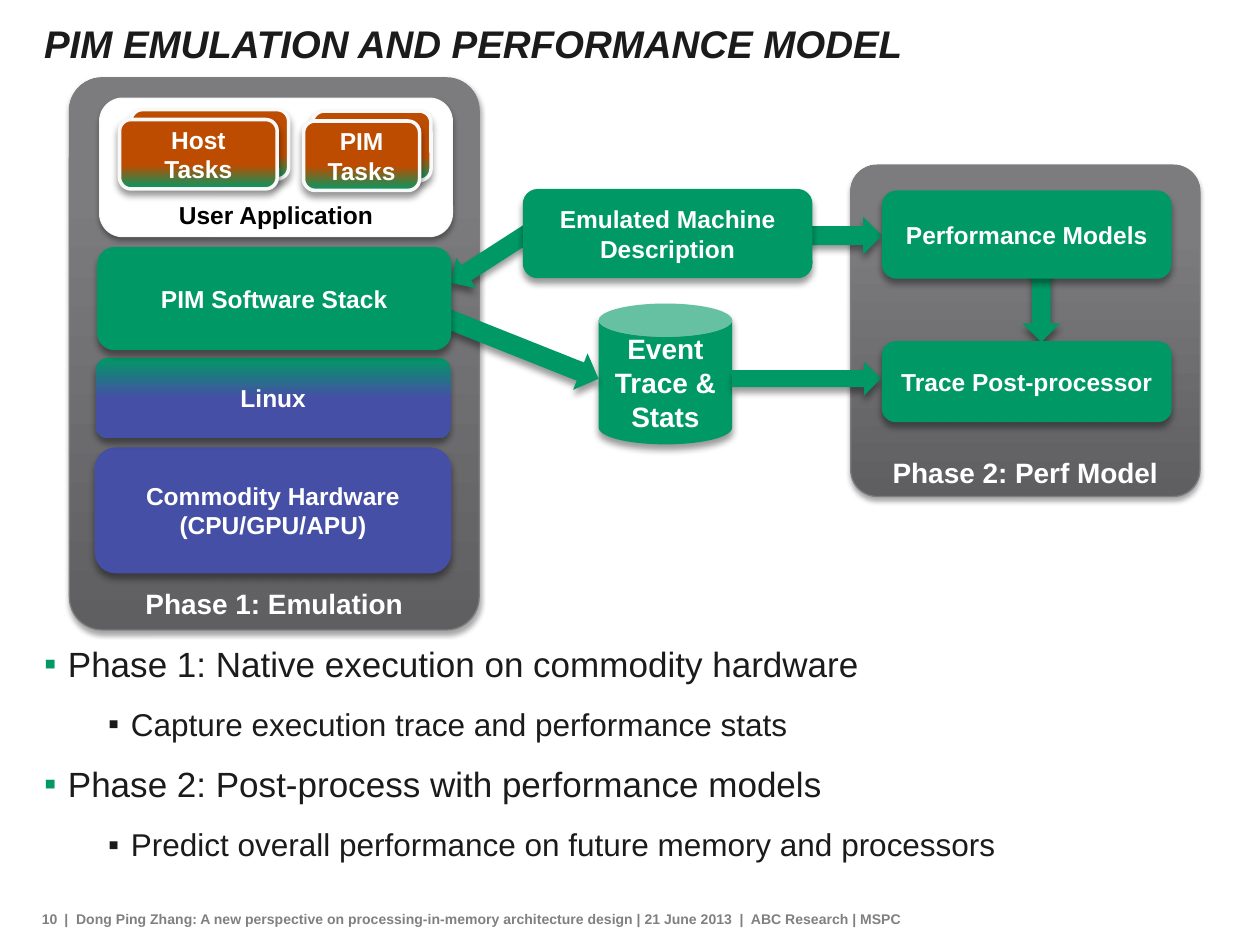
from lxml.etree import SubElement
from pptx import Presentation
from pptx.dml.color import RGBColor
from pptx.enum.shapes import MSO_SHAPE as SHAPE
from pptx.enum.text import MSO_ANCHOR as ANCHOR, PP_ALIGN as ALIGN
from pptx.oxml.ns import qn
from pptx.util import Cm, Pt

FONT = "Arial"
GREEN, BLUE, ORANGE = "009966", "464FA6", "BD4C00"
WHITE, OFF_WHITE, BLACK = "FFFFFF", "F9F9F9", "000000"
INK, FOOTER_GREY, PANEL_LINE = "1B1B1B", "807F82", "7D7C7F"

# Gradients: start colour, end colour, end position, counterclockwise angle
PANEL_FILL = ("5F5E61", "7C7B7E", 0.8, 90)
LINUX_FILL = (GREEN, BLUE, 0.5, 270)
TASK_FILL = (GREEN, ORANGE, 0.35, 90)

# Shadows: opacity %, blur pt, distance pt
BOX_SHADOW, PANEL_SHADOW = (40, 4, 3), (35, 3.1, 1.8)

TITLE = "PIM EMULATION AND PERFORMANCE MODEL"
FOOTER = ("|  Dong Ping Zhang: A new perspective on processing-in-memory architecture "
          "design | 21 June 2013  |  ABC Research | MSPC")
BULLETS = [
    (0, "Phase 1: Native execution on commodity hardware"),
    (1, "Capture execution trace and performance stats"),
    (0, "Phase 2: Post-process with performance models"),
    (1, "Predict overall performance on future memory and processors"),
]
# Per level: text size, left margin cm, hanging indent cm, bullet colour
LEVELS = [(20, 0.48, 0.48, GREEN), (18, 1.75, 0.46, INK)]

# Boxes: text, (left, top, width, height) in cm, fill
PANELS = [
    ("Phase 2: Perf Model", (17.15, 3.33, 7.04, 6.68)),
    ("Phase 1: Emulation", (1.4, 1.57, 8.26, 11.13)),
]
USER_APP = ("User Application", (2.01, 1.98, 7.11, 2.79))
EVENT_STORE = ("Event Trace & Stats", (12.07, 6.12, 2.69, 2.84))
# Arrows: (left, top, width, height) in cm, rotation
ARROWS = [
    ((8.94, 4.83, 1.85, 0.74), 147.2),
    ((8.71, 6.6, 3.48, 0.79), 21.7),
    ((16.28, 4.37, 1.5, 0.76), 0),
    ((14.76, 7.29, 3, 0.69), 0),
    ((20.24, 5.77, 1.5, 0.76), 90),
]
BOXES = [
    ("Commodity Hardware (CPU/GPU/APU)", (1.91, 9.02, 7.19, 2.54), BLUE),
    ("Linux", (1.93, 7.21, 7.16, 1.63), LINUX_FILL),
    ("PIM Software Stack", (1.96, 4.98, 7.14, 2.08), GREEN),
    ("Emulated Machine Description", (10.54, 3.81, 5.84, 1.8), GREEN),
    ("Performance Models", (17.78, 3.84, 5.84, 1.78), GREEN),
    ("Trace Post-processor", (17.78, 6.88, 5.84, 1.63), GREEN),
]
# Task stacks: text, back card, front card
TASKS = [
    ("Host Tasks", (2.64, 2.21, 3.18, 1.4), (2.41, 2.41, 3.18, 1.4)),
    ("PIM Tasks", (6.3, 2.24, 2.39, 1.4), (6.12, 2.44, 2.34, 1.4)),
]


def rgb(color):
    return RGBColor.from_string(color)


def add_run(p, text, size, color, bold=False, italic=False):
    r = p.add_run()
    r.text = text
    r.font.name, r.font.size = FONT, Pt(size)
    r.font.bold, r.font.italic = bold, italic
    r.font.color.rgb = rgb(color)


def set_margins(tf, left, top, right, bottom):
    tf.margin_left, tf.margin_top = Cm(left), Cm(top)
    tf.margin_right, tf.margin_bottom = Cm(right), Cm(bottom)


def set_fill(sp, fill):
    """Fill with one colour, or with a gradient tuple."""
    if isinstance(fill, str):
        sp.fill.solid()
        sp.fill.fore_color.rgb = rgb(fill)
        return
    start, end, position, angle = fill
    sp.fill.gradient()
    sp.fill.gradient_angle = angle
    first, last = sp.fill.gradient_stops
    first.color.rgb, first.position = rgb(start), 0
    last.color.rgb, last.position = rgb(end), position


def set_shadow(sp, opacity, blur, distance):
    sp.shadow.inherit = False
    effects = sp._element.spPr.find(qn("a:effectLst"))
    shadow = SubElement(effects, qn("a:outerShdw"), blurRad=str(Pt(blur)),
                        dist=str(Pt(distance)), dir="5400000", rotWithShape="0")
    color = SubElement(shadow, qn("a:srgbClr"), val=BLACK)
    SubElement(color, qn("a:alpha"), val=str(opacity * 1000))


def add_box(slide, kind, place, fill, text="", size=14, color=WHITE, line=None,
            shadow=BOX_SHADOW, anchor=ANCHOR.MIDDLE, margins=(0.25, 0.13, 0.25, 0.13)):
    sp = slide.shapes.add_shape(kind, *map(Cm, place))
    set_fill(sp, fill)
    if line:
        sp.line.color.rgb, sp.line.width = rgb(line[0]), Pt(line[1])
    else:
        sp.line.fill.background()
    set_shadow(sp, *shadow)
    if text:
        tf = sp.text_frame
        tf.word_wrap, tf.vertical_anchor = True, anchor
        set_margins(tf, *margins)
        p = tf.paragraphs[0]
        p.alignment = ALIGN.CENTER
        add_run(p, text, size, color, bold=True)
    return sp


def add_text_frame(slide, place, margins=(0, 0, 0, 0), wrap=True):
    tf = slide.shapes.add_textbox(*map(Cm, place)).text_frame
    tf.word_wrap = wrap
    set_margins(tf, *margins)
    return tf


def add_footer(slide, place, text, align, wrap):
    tf = add_text_frame(slide, place, (0.23, 0.1, 0.23, 0.1), wrap)
    tf.vertical_anchor = ANCHOR.MIDDLE
    tf.paragraphs[0].alignment = align
    add_run(tf.paragraphs[0], text, 8, FOOTER_GREY, bold=True)


def add_bullets(slide, place):
    tf = add_text_frame(slide, place)
    for i, (level, text) in enumerate(BULLETS):
        size, margin, hanging, color = LEVELS[level]
        p = tf.add_paragraph() if i else tf.paragraphs[0]
        p.level = level
        pPr = p._p.get_or_add_pPr()
        pPr.set("marL", str(Cm(margin)))
        pPr.set("indent", str(-Cm(hanging)))
        SubElement(SubElement(pPr, qn("a:buClr")), qn("a:srgbClr"), val=color)
        SubElement(pPr, qn("a:buFont"), typeface=FONT)
        SubElement(pPr, qn("a:buChar"), char="▪")
        p.space_before = Pt(5.8 if i else 0)
        p.space_after = Pt(5.8)
        add_run(p, text, size, INK)


def add_diagram(slide):
    rounded = SHAPE.ROUNDED_RECTANGLE
    for text, place in PANELS:
        sp = add_box(slide, rounded, place, PANEL_FILL, text, 16, line=(PANEL_LINE, 0.75),
                     shadow=PANEL_SHADOW, anchor=ANCHOR.BOTTOM, margins=(0.25, 0.13, 0.25, 0))
        sp.adjustments[0] = 0.08
    text, place = USER_APP
    add_box(slide, rounded, place, WHITE, text, color=BLACK, line=(OFF_WHITE, 0.75),
            shadow=PANEL_SHADOW, anchor=ANCHOR.BOTTOM, margins=(0.25, 0.13, 0.25, 0))
    text, place = EVENT_STORE
    add_box(slide, SHAPE.CAN, place, GREEN, text, 16, margins=(0, 0, 0, 0))
    for place, rotation in ARROWS:
        add_box(slide, SHAPE.RIGHT_ARROW, place, GREEN).rotation = rotation
    for text, place, fill in BOXES:
        add_box(slide, rounded, place, fill, text)
    for text, back, front in TASKS:
        for place, label in ((back, ""), (front, text)):
            add_box(slide, rounded, place, TASK_FILL, label, line=(OFF_WHITE, 2))


def main():
    prs = Presentation()
    prs.slide_width, prs.slide_height = Cm(25.4), Cm(19.05)
    slide = prs.slides.add_slide(prs.slide_layouts[6])
    add_footer(slide, (0.58, 18.24, 0.81, 0.58), "10", ALIGN.RIGHT, False)
    add_footer(slide, (1.07, 18.24, 17.58, 0.58), FOOTER, ALIGN.LEFT, False)
    title = add_text_frame(slide, (0.89, 0.41, 23.62, 1.78))
    add_run(title.paragraphs[0], TITLE, 22, INK, bold=True, italic=True)
    add_bullets(slide, (0.89, 12.95, 23.62, 4.42))
    add_diagram(slide)
    prs.save("out.pptx")


if __name__ == "__main__":
    main()
